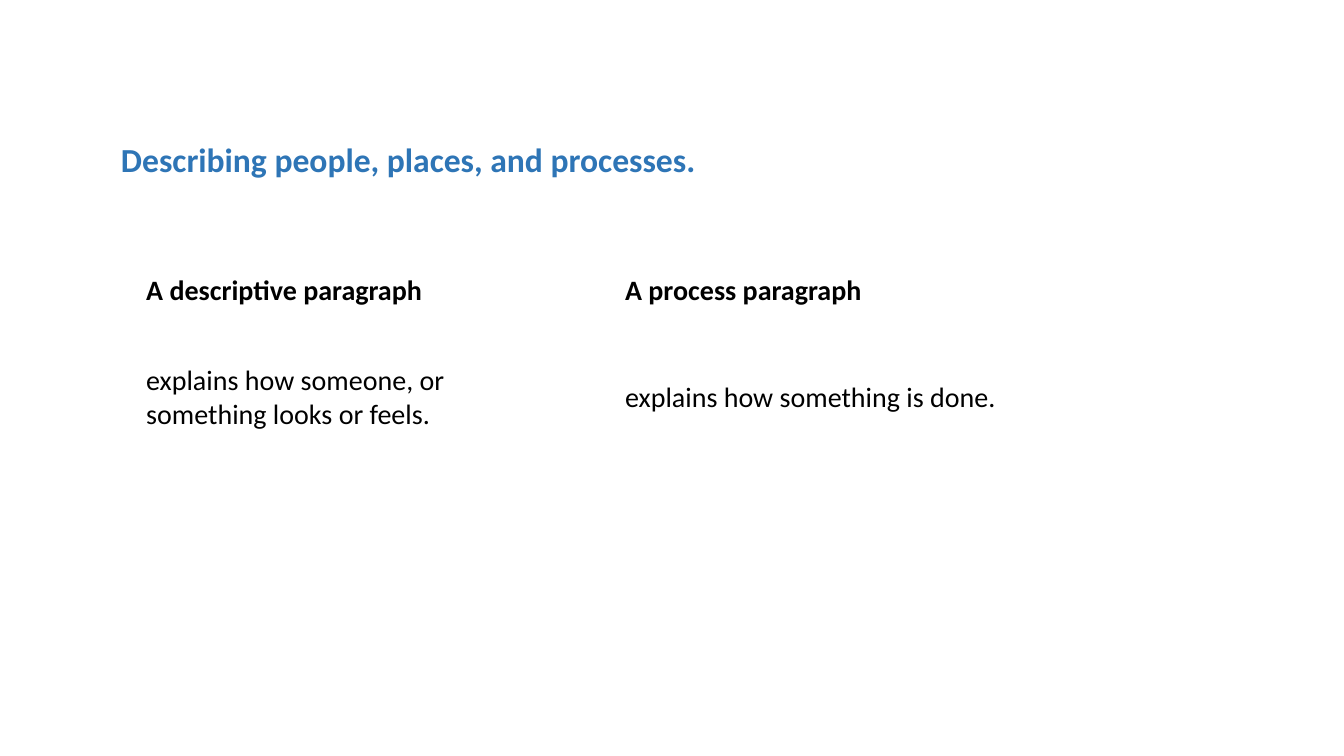
from pptx import Presentation
from pptx.dml.color import RGBColor
from pptx.enum.text import MSO_ANCHOR, PP_ALIGN
from pptx.util import Inches, Pt

BLUE = RGBColor(0x2E, 0x75, 0xB6)
BLACK = RGBColor(0, 0, 0)
WHITE = RGBColor(255, 255, 255)

TITLE = "Describing people, places, and processes."
ROWS = [
    [["A descriptive paragraph"], ["A process paragraph"]],
    [["explains how someone, or", "something looks or feels."],
     ["explains how something is done."]],
]
HEIGHTS = [0.89, 0.9]
WIDTH = 4.75


def write(frame, lines, size=20, color=BLACK, bold=False, spacing=1.0):
    frame.word_wrap = True
    for i, line in enumerate(lines):
        para = frame.add_paragraph() if i else frame.paragraphs[0]
        para.alignment = PP_ALIGN.LEFT
        para.line_spacing = spacing
        run = para.add_run()
        run.text = line
        font = run.font
        font.name, font.size, font.bold = "Calibri", Pt(size), bold
        font.color.rgb = color


deck = Presentation()
deck.slide_width, deck.slide_height = Inches(13.33), Inches(7.5)
slide = deck.slides.add_slide(deck.slide_layouts[5])

title = slide.shapes.title
title.left, title.top = Inches(1.1), Inches(1.33)
title.width, title.height = Inches(11.13), Inches(1.11)
title.text_frame.vertical_anchor = MSO_ANCHOR.TOP
write(title.text_frame, [TITLE], size=24, color=BLUE, bold=True)

table = slide.shapes.add_table(
    len(ROWS), len(ROWS[0]), Inches(1.35), Inches(2.67),
    Inches(WIDTH * len(ROWS[0])), Inches(sum(HEIGHTS))).table
table.first_row = table.horz_banding = False
for col in table.columns:
    col.width = Inches(WIDTH)
for r, row in enumerate(ROWS):
    table.rows[r].height = Inches(HEIGHTS[r])
    for c, lines in enumerate(row):
        cell = table.cell(r, c)
        cell.fill.solid()
        cell.fill.fore_color.rgb = WHITE
        write(cell.text_frame, lines, bold=r == 0,
              spacing=1.5 if r and c else 1.0)

deck.save("out.pptx")
